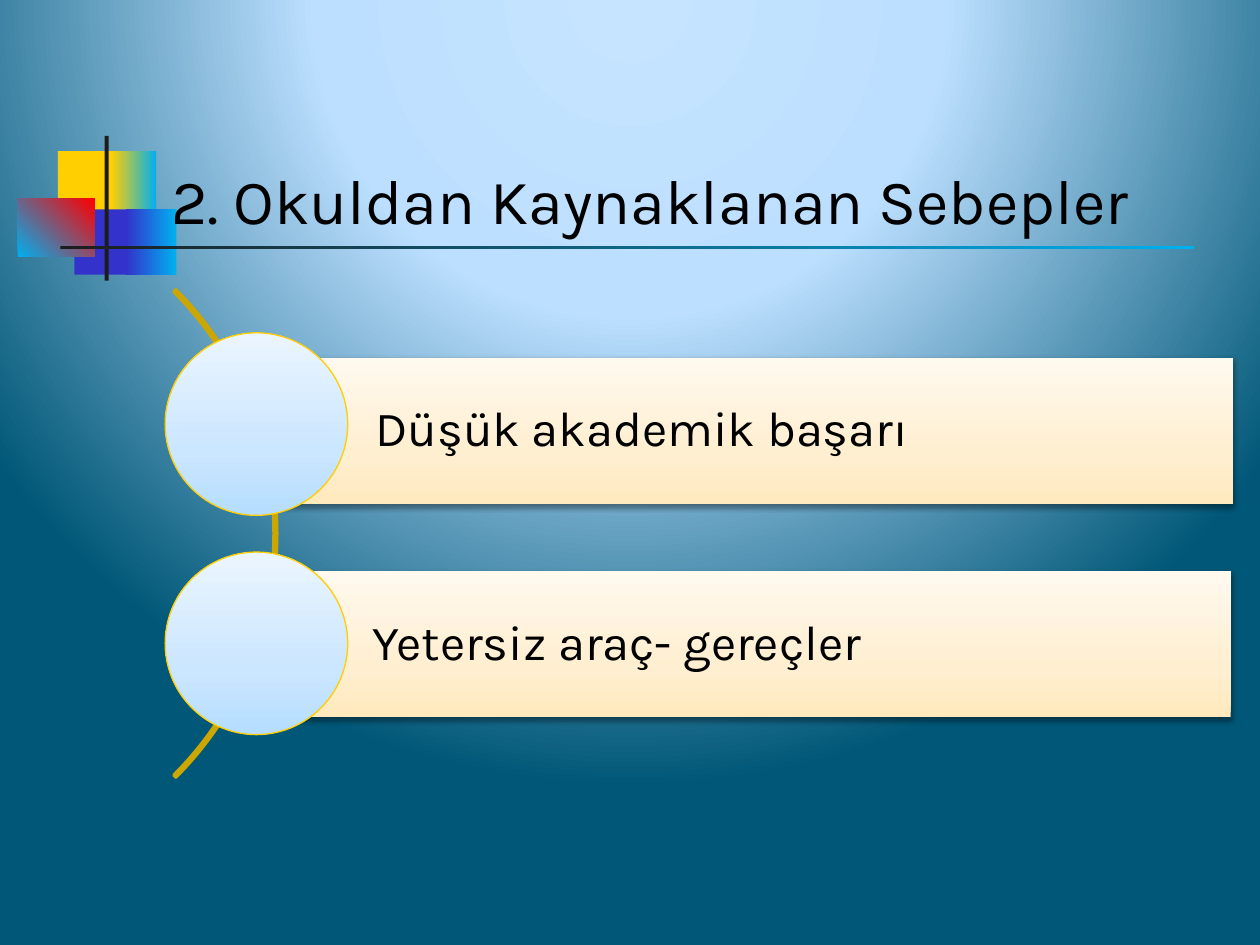
from lxml import etree
from pptx import Presentation
from pptx.dml.color import RGBColor
from pptx.enum.shapes import MSO_SHAPE as SHAPE
from pptx.enum.text import MSO_ANCHOR as ANCHOR
from pptx.oxml import parse_xml
from pptx.oxml.ns import nsdecls, qn
from pptx.util import Cm, Pt

BLACK = RGBColor(0x00, 0x00, 0x00)
INK = RGBColor(0x1C, 0x1C, 0x1C)
YELLOW = RGBColor(0xFF, 0xCF, 0x01)
GOLD = RGBColor(0xCC, 0xA6, 0x01)
INDIGO = RGBColor(0x33, 0x33, 0xCC)
CYAN = RGBColor(0x00, 0xB0, 0xF0)
RED = RGBColor(0xFF, 0x00, 0x00)
SKY = [(0, RGBColor(0xC6, 0xE4, 0xFF)), (40, RGBColor(0xBC, 0xDF, 0xFF)),
       (100, RGBColor(0x00, 0x57, 0x77))]
CREAM = [(0, RGBColor(0xFF, 0xE9, 0xBD)), (35, RGBColor(0xFF, 0xEF, 0xD1)),
         (100, RGBColor(0xFF, 0xF9, 0xEE))]
ICE = [(0, RGBColor(0xB5, 0xDD, 0xFF)), (35, RGBColor(0xCB, 0xE6, 0xFF)),
       (100, RGBColor(0xEB, 0xF5, 0xFF))]
FONT = "Karla"


def set_gradient(fill, holder, stops, direction):
    """Give the holder element a gradient with any number of stops."""
    fill.solid()
    marks = "".join(f'<a:gs pos="{pos * 1000}"><a:srgbClr val="{color}"/></a:gs>'
                    for pos, color in stops)
    gradient = parse_xml(f'<a:gradFill {nsdecls("a")} rotWithShape="1">'
                         f'<a:gsLst>{marks}</a:gsLst>{direction}</a:gradFill>')
    holder.replace(holder.find(qn("a:solidFill")), gradient)


def add_figure(kind, box, color=None, angle=0, outline=None, width=0):
    """Add a shape; color is one colour, a list of gradient stops or None."""
    figure = slide.shapes.add_shape(kind, *[Cm(length) for length in box])
    figure.shadow.inherit = False
    if color is None:
        figure.fill.background()
    elif isinstance(color, list):
        set_gradient(figure.fill, figure._element.spPr, color,
                     f'<a:lin ang="{angle * 60000}" scaled="0"/>')
    else:
        figure.fill.solid()
        figure.fill.fore_color.rgb = color
    if outline is None:
        figure.line.fill.background()
    else:
        figure.line.color.rgb = outline
        figure.line.width = Pt(width)
    return figure


prs = Presentation()
prs.slide_width, prs.slide_height = Cm(25.4), Cm(19.05)
slide = prs.slides.add_slide(prs.slide_layouts[6])

# Background: glow from above the slide
background_fill = slide.background.fill
background_fill.solid()
set_gradient(background_fill, slide._element.find(".//" + qn("p:bgPr")), SKY,
             '<a:path path="circle"><a:fillToRect l="50000" t="-80000" '
             'r="50000" b="180000"/></a:path>')

# Coloured squares and crossing rules beside the title
for box, color, angle in [
    ((1.17, 3.05, 1.22, 1.32), YELLOW, 0),
    ((2.24, 3.05, 0.91, 1.32), [(0, YELLOW), (100, CYAN)], 0),
    ((1.5, 4.22, 1.17, 1.32), INDIGO, 0),
    ((2.54, 4.22, 1.02, 1.32), [(0, INDIGO), (100, CYAN)], 0),
    ((0.36, 4.01, 1.55, 1.17), [(0, CYAN), (100, RED)], 315),
    ((2.11, 2.74, 0.08, 2.92), INK, 0),
    ((1.22, 4.95, 22.86, 0.08), [(0, INK), (100, CYAN)], 0),
]:
    add_figure(SHAPE.RECTANGLE, box, color, angle)

# Title
title = slide.shapes.add_textbox(Cm(3.2), Cm(1.73), Cm(21.64), Cm(3.18)).text_frame
title.word_wrap = True
title.vertical_anchor = ANCHOR.BOTTOM
heading = title.paragraphs[0].add_run()
heading.text = "2. Okuldan Kaynaklanan Sebepler"
heading.font.name, heading.font.size = FONT, Pt(36)
heading.font.color.rgb = BLACK

# Arc behind the causes
arc = add_figure(SHAPE.BLOCK_ARC, (-8.31, 3.81, 13.89, 13.89), outline=GOLD, width=2)
for index, value in enumerate((189, 27, 0.004)):
    arc.adjustments[index] = value

# Causes: a shaded bar with a circle on its left end
for cause, bar_left, bar_top, circle_top in [
    ("Düşük akademik başarı", 5.23, 7.21, 6.71),
    ("Yetersiz araç- gereçler", 5.18, 11.51, 11.13),
]:
    bar = add_figure(SHAPE.RECTANGLE, (bar_left, bar_top, 19.63, 2.95), CREAM, 270)
    effects = bar._element.spPr.find(qn("a:effectLst"))
    shadow = etree.SubElement(effects, qn("a:outerShdw"), blurRad=str(Pt(3.1)),
                              dist=str(Pt(1.6)), dir="5400000", rotWithShape="0")
    shade = etree.SubElement(shadow, qn("a:srgbClr"), val=str(BLACK))
    etree.SubElement(shade, qn("a:alpha"), val="38000")

    label = bar.text_frame
    label.word_wrap = True
    label.vertical_anchor = ANCHOR.MIDDLE
    label.margin_left = Cm(2.34)
    label.margin_top = label.margin_right = label.margin_bottom = Cm(0.2)
    line = label.paragraphs[0]
    line.alignment = 1  # left
    line.line_spacing = 0.9
    words = line.add_run()
    words.text = cause
    words.font.name, words.font.size = FONT, Pt(28)
    words.font.color.rgb = BLACK

    add_figure(SHAPE.OVAL, (3.33, circle_top, 3.68, 3.68), ICE, 270, YELLOW, 0.75)

prs.save("out.pptx")
